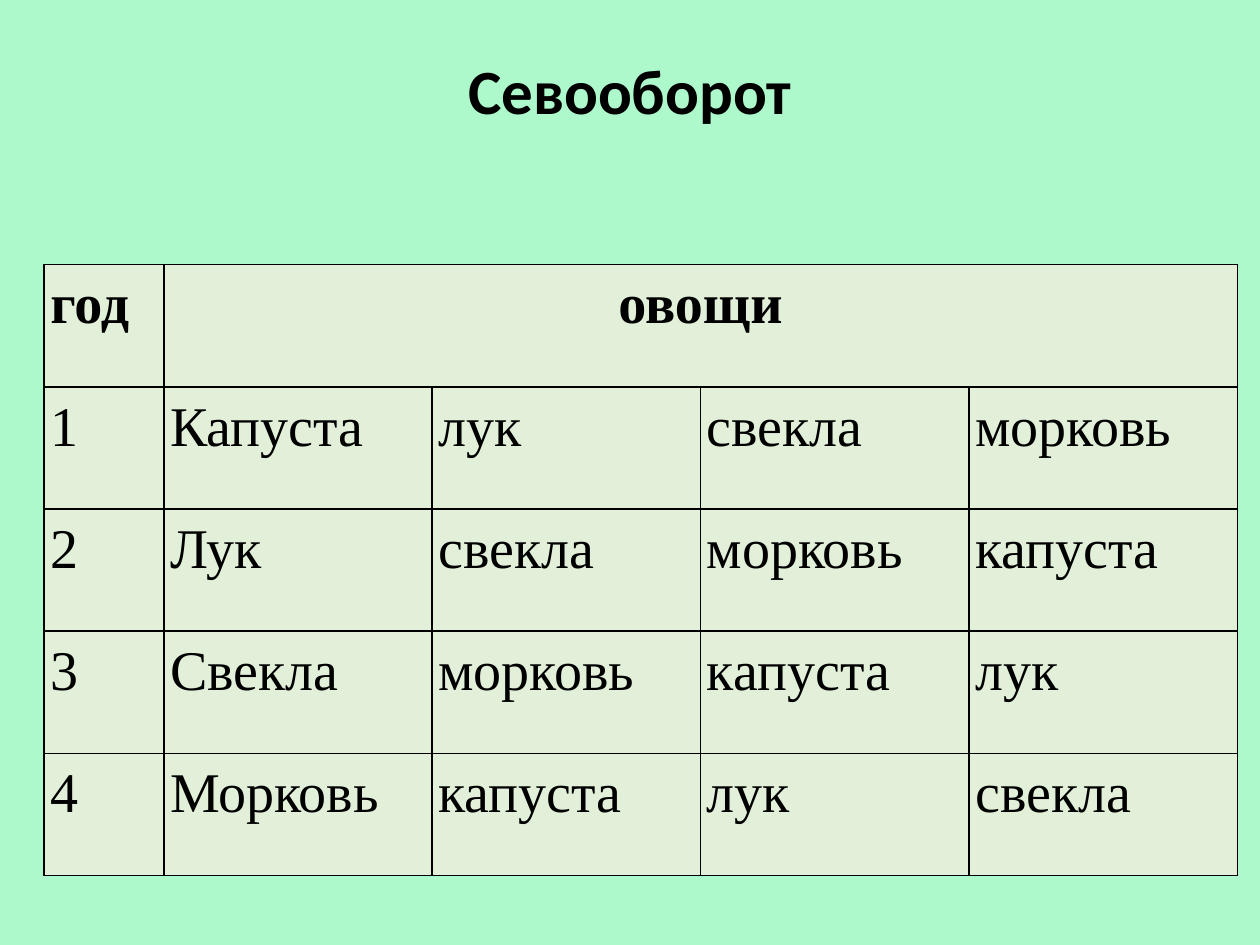
from lxml import etree
from pptx import Presentation, util as u
from pptx.dml.color import RGBColor
from pptx.enum import text
from pptx.oxml.ns import qn

BACKGROUND, CELL_FILL, INK = "ADF9CC", "E2F0D9", "000000"
CROPS = ["капуста", "лук", "свекла", "морковь"]
YEAR_WIDTH, CROP_WIDTH, ROW_HEIGHT = 0.95, 2.13, 0.97
ALIGN = text.PP_ALIGN


def paint(fill, color):
    fill.solid()
    fill.fore_color.rgb = RGBColor.from_string(color)


def write(paragraph, words, align, spacing, **font):
    paragraph.text = words
    paragraph.alignment = align
    paragraph.line_spacing = spacing
    for name, value in font.items():
        setattr(paragraph.font, name, value)
    paint(paragraph.font.fill, INK)


def add_title(slide, words):
    box = slide.shapes.add_textbox(u.Inches(0.5), u.Inches(0.36), u.Inches(9), u.Inches(0.78))
    frame = box.text_frame
    frame.word_wrap = True
    frame.vertical_anchor = text.MSO_ANCHOR.MIDDLE
    write(frame.paragraphs[0], words, ALIGN.CENTER, 0.9,
          name="Calibri", size=u.Pt(36), bold=True)


def add_borders(cell):
    """Draw a one-point line on each side; lines must come before the fill."""
    properties = cell._tc.get_or_add_tcPr()
    for index, side in enumerate(("a:lnL", "a:lnR", "a:lnT", "a:lnB")):
        line = etree.Element(qn(side), w=str(u.Pt(1)))
        solid = etree.SubElement(line, qn("a:solidFill"))
        etree.SubElement(solid, qn("a:srgbClr"), val=INK)
        properties.insert(index, line)


def fill_cell(cell, words, align, bold):
    margins = {"margin_left": 0.05, "margin_right": 0.05, "margin_top": 0, "margin_bottom": 0}
    for name, value in margins.items():
        setattr(cell, name, u.Inches(value))
    paint(cell.fill, CELL_FILL)
    add_borders(cell)
    write(cell.text_frame.paragraphs[0], words, align, 1.15,
          name="Times New Roman", size=u.Pt(32), bold=bold)


def rotation_rows():
    """Each year the crops move one place to the left."""
    rows = [["год", "овощи", "", "", ""]]
    for year in range(len(CROPS)):
        first, *others = CROPS[year:] + CROPS[:year]
        rows.append([str(year + 1), first.capitalize(), *others])
    return rows


def add_rotation_table(slide, rows):
    widths = [YEAR_WIDTH] + [CROP_WIDTH] * len(CROPS)
    frame = slide.shapes.add_table(
        len(rows), len(widths), u.Inches(0.35), u.Inches(2.1),
        u.Inches(sum(widths)), u.Inches(ROW_HEIGHT * len(rows)))
    table = frame.table
    for column, width in zip(table.columns, widths):
        column.width = u.Inches(width)
    for r, row in enumerate(rows):
        table.rows[r].height = u.Inches(ROW_HEIGHT)
        for c, words in enumerate(row):
            header = r == 0
            align = ALIGN.CENTER if header and c else ALIGN.JUSTIFY
            fill_cell(table.cell(r, c), words, align, header)
    table.cell(0, 1).merge(table.cell(0, len(CROPS)))


def main():
    presentation = Presentation()
    presentation.slide_width, presentation.slide_height = u.Inches(10), u.Inches(7.5)
    slide = presentation.slides.add_slide(presentation.slide_layouts[6])
    paint(slide.background.fill, BACKGROUND)
    add_title(slide, "Севооборот")
    add_rotation_table(slide, rotation_rows())
    presentation.save("out.pptx")


if __name__ == "__main__":
    main()
